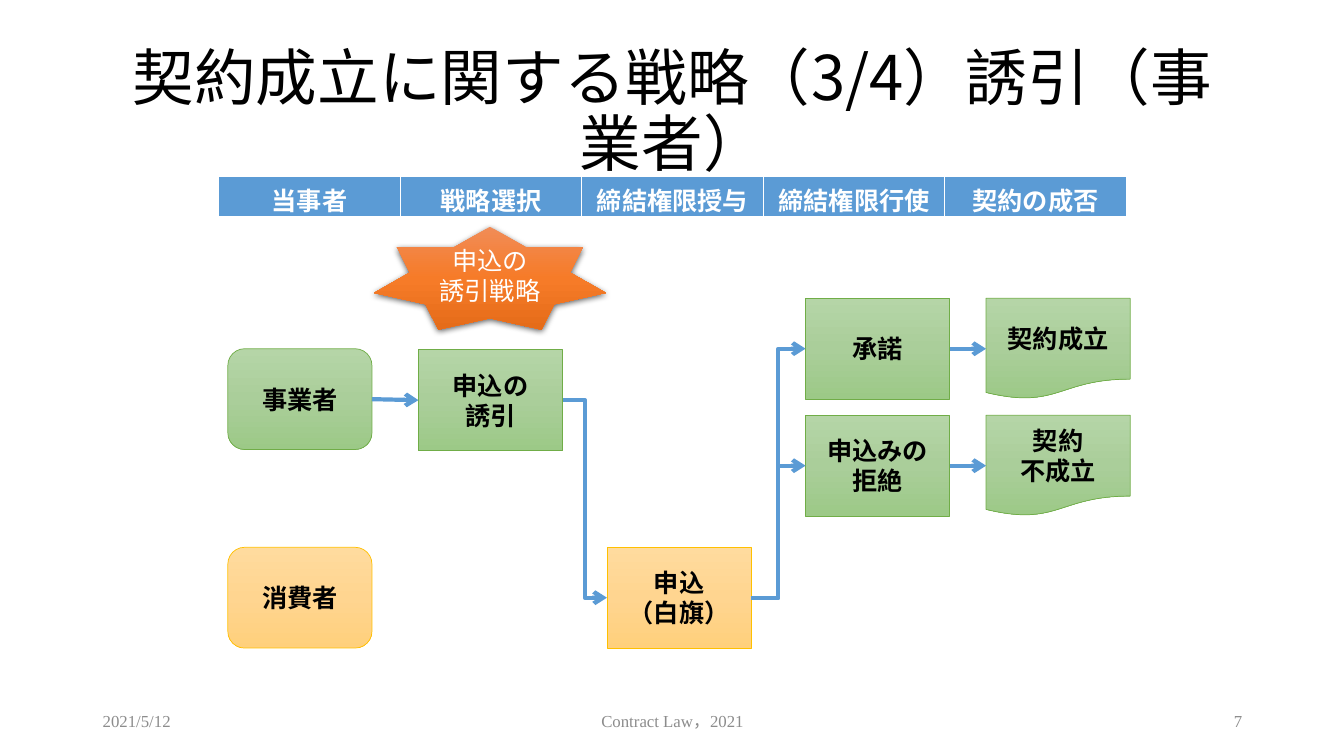
from dataclasses import dataclass

from pptx import Presentation
from pptx.dml.color import RGBColor
from pptx.enum.shapes import MSO_CONNECTOR, MSO_SHAPE
from pptx.enum.text import MSO_ANCHOR, PP_ALIGN
from pptx.oxml import parse_xml
from pptx.oxml.ns import nsdecls, qn
from pptx.util import Inches, Pt


@dataclass(frozen=True)
class Theme:
    black: str = "000000"
    white: str = "FFFFFF"
    grey: str = "8C8C8C"
    blue: str = "5B9BD5"
    green: tuple = ("B5D5A7", "AACE9A", "9CC987")
    leaf: str = "70AD47"
    gold: tuple = ("FFDB9E", "FFD590", "FFD07C")
    amber: str = "FFC000"
    orange: tuple = ("F18C57", "F67B28", "E56C19")
    sans: str = "Noto Sans CJK JP"
    serif: str = "Times New Roman"
    title: int = 44
    body: int = 18
    small: int = 12


THEME = Theme()


def rgb(code):
    return RGBColor.from_string(code)


def node(xml):
    return parse_xml(xml.replace(">", f" {nsdecls('a')}>", 1))


def write(frame, text, size, color, bold=False, font=THEME.serif, align=PP_ALIGN.CENTER):
    frame.text = text
    frame.word_wrap = True
    frame.vertical_anchor = MSO_ANCHOR.MIDDLE
    for para in frame.paragraphs:
        para.alignment = align
        for run in para.runs:
            run.font.size = Pt(size)
            run.font.bold = bold
            run.font.name = font
            run.font.color.rgb = rgb(color)
            latin = run.font._element.find(qn("a:latin"))
            latin.addnext(node(f'<a:ea><!----></a:ea>'.replace("<!---->", "")))
            latin.getnext().set("typeface", THEME.sans)


def label(slide, box, text, size, color, **style):
    frame = slide.shapes.add_textbox(*map(Inches, box)).text_frame
    write(frame, text, size, color, **style)
    return frame


def title(slide, box):
    frame = label(slide, box, "契約成立に関する戦略（3/4）誘引（事業者）",
                  THEME.title, THEME.black, font=THEME.sans)
    frame.paragraphs[0].line_spacing = 0.9


def footer(slide, box):
    left, top, width, height = box
    parts = (
        ("2021/5/12", left, 3, PP_ALIGN.LEFT),
        ("Contract Law，2021", left + (width - 4.5) / 2, 4.5, PP_ALIGN.CENTER),
        ("7", left + width - 3, 3, PP_ALIGN.RIGHT),
    )
    for text, start, span, align in parts:
        label(slide, (start, top, span, height), text,
              THEME.small, THEME.grey, align=align)


def border(cell):
    props = cell._tc.get_or_add_tcPr()
    for spot, (side, width) in enumerate((("L", 1), ("R", 1), ("T", 1), ("B", 3))):
        props.insert(spot, node(
            f'<a:ln{side} w="{Pt(width)}"><a:solidFill>'
            f'<a:srgbClr val="{THEME.white}"/></a:solidFill></a:ln{side}>'))


def header(slide, box):
    names = ("当事者", "戦略選択", "締結権限授与", "締結権限行使", "契約の成否")
    table = slide.shapes.add_table(1, len(names), *map(Inches, box)).table
    for cell, name in zip(table.rows[0].cells, names):
        write(cell.text_frame, name, THEME.body, THEME.white, bold=True)
        cell.vertical_anchor = MSO_ANCHOR.TOP
        cell.fill.solid()
        cell.fill.fore_color.rgb = rgb(THEME.blue)
        border(cell)


def block(slide, kind, box, text, shades, edge=None, color=THEME.black, bold=True):
    shape = slide.shapes.add_shape(kind, *map(Inches, box))
    shape.shadow.inherit = False
    shape.fill.gradient()
    shape.fill.gradient_angle = 270
    stops = shape._element.spPr.find(".//" + qn("a:gsLst"))
    for stop in list(stops):
        stops.remove(stop)
    for spot, shade in enumerate(shades):
        stops.append(node(f'<a:gs pos="{spot * 50000}"><a:srgbClr val="{shade}"/></a:gs>'))
    if edge:
        shape.line.color.rgb = rgb(edge)
        shape.line.width = Pt(0.5)
    else:
        shape.line.fill.background()
    write(shape.text_frame, text, THEME.body, color, bold=bold)
    return shape


def burst(slide, box):
    star = block(slide, MSO_SHAPE.STAR_7_POINT, box, "申込の\v誘引戦略",
                 THEME.orange, color=THEME.white, bold=False)
    star._element.spPr.find(qn("a:effectLst")).append(node(
        f'<a:outerShdw blurRad="{Pt(4.5)}" dist="{Pt(1.5)}" dir="5400000" rotWithShape="0">'
        f'<a:srgbClr val="{THEME.black}"><a:alpha val="63000"/></a:srgbClr></a:outerShdw>'))


def link(slide, start, end, kind):
    line = slide.shapes.add_connector(kind, 0, 0, 0, 0)
    line.begin_connect(start, 3)
    line.end_connect(end, 1)
    line.line.color.rgb = rgb(THEME.blue)
    line.line.width = Pt(3)
    line.line._get_or_add_ln().append(node('<a:tailEnd type="arrow"></a:tailEnd>'))
    line._element.spPr.append(node("<a:effectLst></a:effectLst>"))


def flow(slide, box):
    left, top = box[:2]
    green = (THEME.green, THEME.leaf)
    gold = (THEME.gold, THEME.amber)
    round_box, plain, paper = (MSO_SHAPE.ROUNDED_RECTANGLE, MSO_SHAPE.RECTANGLE,
                               MSO_SHAPE.FLOWCHART_DOCUMENT)
    cols = (0.09, 1.98, 3.85, 5.82, 7.61)
    steps = {
        "trader": (round_box, 0, 1.21, "事業者", green),
        "buyer": (round_box, 0, 3.18, "消費者", gold),
        "invite": (plain, 1, 1.22, "申込の\v誘引", green),
        "offer": (plain, 2, 3.18, "申込\n（白旗）", gold),
        "accept": (plain, 3, 0.71, "承諾", green),
        "refuse": (plain, 3, 1.87, "申込みの\n拒絶", green),
        "formed": (paper, 4, 0.71, "契約成立", green),
        "failed": (paper, 4, 1.87, "契約\v不成立", green),
    }
    made = {
        name: block(slide, kind, (left + cols[col], top + drop, 1.43, 1), text, *paint)
        for name, (kind, col, drop, text, paint) in steps.items()
    }
    straight, bent = MSO_CONNECTOR.STRAIGHT, MSO_CONNECTOR.ELBOW
    for start, end, kind in (
        ("trader", "invite", straight),
        ("invite", "offer", bent),
        ("offer", "accept", bent),
        ("offer", "refuse", bent),
        ("accept", "formed", straight),
        ("refuse", "failed", straight),
    ):
        link(slide, made[start], made[end], kind)
    burst(slide, (left + 1.54, top, 2.3, 1.02))


def main():
    deck = Presentation()
    deck.slide_width, deck.slide_height = Inches(13.33), Inches(7.5)
    slide = deck.slides.add_slide(deck.slide_layouts[6])
    title(slide, (0.92, 0.4, 11.5, 1.45))
    footer(slide, (0.92, 6.95, 11.5, 0.4))
    header(slide, (2.17, 1.75, 9, 0.41))
    flow(slide, (2.17, 2.25, 9.04, 4.18))
    deck.save("out.pptx")


if __name__ == "__main__":
    main()
